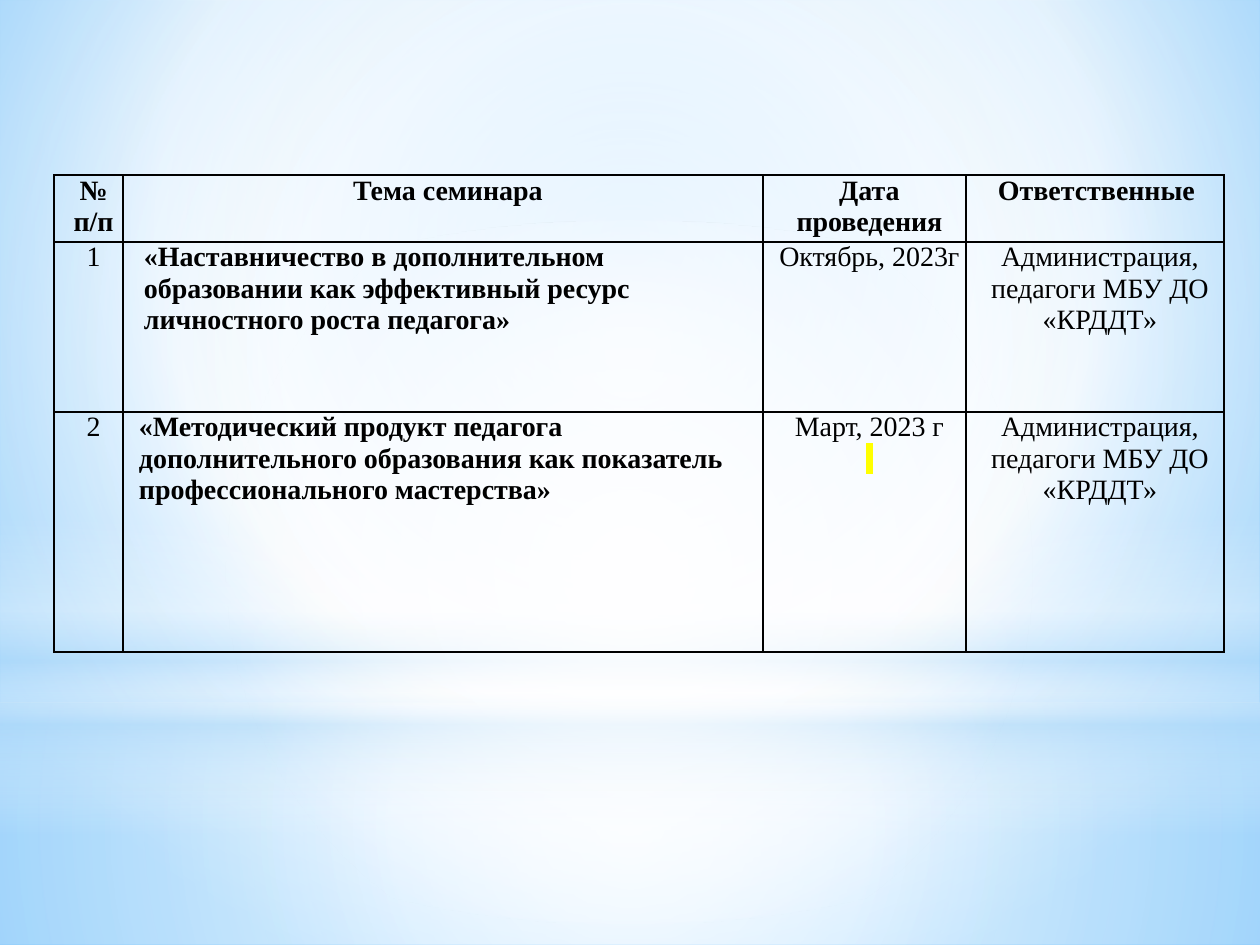
import pptx
import pptx.util
import pptx.dml.color
import pptx.enum.shapes
import pptx.enum.text
import pptx.oxml
import pptx.oxml.ns
from lxml import etree

PX = 914400 / 126
W, H = 1260, 945
FONT = "Times New Roman"
COLORS = {"ink": "000000", "white": "FFFFFF", "pale": "B4DCFA",
          "sky": "9ED5FF", "blue": "5BB9FF", "mark": "FFFF00"}
CENTER = (50, 50, 50, 50)
RECT = pptx.enum.shapes.MSO_SHAPE.RECTANGLE
OVAL = pptx.enum.shapes.MSO_SHAPE.OVAL

# shape, box, stops (position, colour, opacity), focus (None: top to bottom)
LAYERS = [
    (RECT, (0, 703, W, 242),
     [(0, "white", 91), (37, "white", 76), (100, "pale", 79)], CENTER),
    (RECT, (0, 0, W, 703),
     [(0, "white", 89), (48, "white", 62), (100, "pale", 79)], CENTER),
    (RECT, (0, 519, W, 315),
     [(0, "white", 0), (29, "white", 30), (45, "pale", 40),
      (55, "white", 26), (65, "pale", 60), (100, "white", 0)], None),
    (OVAL, (0, 221, W, 703), [(0, "white", 100), (56, "white", 0)], CENTER),
]

COLS = [69, 640, 203, 258]
ROWS = [67, 170, 240]
STAFF = "Администрация, педагоги МБУ ДО «КРДДТ»"
CELLS = [
    ["№ п/п", "Тема семинара", "Дата проведения", "Ответственные "],
    ["1", "«Наставничество в дополнительном образовании как эффективный "
     "ресурс личностного роста педагога»", "Октябрь, 2023г", STAFF],
    ["2", "«Методический продукт педагога дополнительного образования как "
     "показатель профессионального мастерства»", "Март, 2023 г", STAFF],
]


def px(n):
    return pptx.util.Emu(round(n * PX))


def sub(parent, tag, **attrs):
    return etree.SubElement(parent, pptx.oxml.ns.qn(tag),
                            {k: str(v) for k, v in attrs.items()})


def set_gradient(fill, owner, stops, focus):
    fill.gradient()
    grad = next(owner.iter(pptx.oxml.ns.qn("a:gradFill")))
    for child in list(grad):
        grad.remove(child)
    gs_list = sub(grad, "a:gsLst")
    for pos, color, opacity in stops:
        gs = sub(gs_list, "a:gs", pos=pos * 1000)
        clr = sub(gs, "a:srgbClr", val=COLORS[color])
        if opacity < 100:
            sub(clr, "a:alpha", val=opacity * 1000)
    if focus is None:
        sub(grad, "a:lin", ang=5400000, scaled=0)
    else:
        ring = sub(grad, "a:path", path="circle")
        sub(ring, "a:fillToRect", **{k: v * 1000 for k, v in zip("ltrb", focus)})


def add_backdrop(s):
    set_gradient(s.background.fill, s._element,
                 [(0, "sky", 100), (60, "white", 100), (100, "blue", 100)],
                 (20, 10, 20, 60))
    for kind, box, stops, focus in LAYERS:
        sp = s.shapes.add_shape(kind, *map(px, box))
        sp.shadow.inherit = False
        sp.line.fill.background()
        set_gradient(sp.fill, sp._element, stops, focus)


def set_borders(cell):
    tc_pr = cell._tc.get_or_add_tcPr()
    for i, side in enumerate(("a:lnL", "a:lnR", "a:lnT", "a:lnB")):
        ln = sub(tc_pr, side, w=12700)
        sub(sub(ln, "a:solidFill"), "a:srgbClr", val=COLORS["ink"])
        tc_pr.insert(i, ln)


def format_paragraph(p, bold, centered, indent):
    align = pptx.enum.text.PP_ALIGN
    p.alignment = align.CENTER if centered else align.LEFT
    p._p.get_or_add_pPr().set("marL", str(px(indent)))
    p._p.get_or_add_pPr().set("indent", "0")
    font = p.runs[0].font
    font.name, font.size, font.bold = FONT, pptx.util.Pt(16), bold
    font.color.rgb = pptx.dml.color.RGBColor.from_string(COLORS["ink"])


def highlight(r):
    mark = etree.Element(pptx.oxml.ns.qn("a:highlight"))
    sub(mark, "a:srgbClr", val=COLORS["mark"])
    r._r.rPr.find(pptx.oxml.ns.qn("a:solidFill")).addnext(mark)


def add_seminar_table(s, left, top):
    frame = s.shapes.add_table(len(ROWS), len(COLS), px(left), px(top),
                               px(sum(COLS)), px(sum(ROWS)))
    table = frame.table
    table.first_row = table.horz_banding = False
    for col, width in zip(table.columns, COLS):
        col.width = px(width)
    for row, height in zip(table.rows, ROWS):
        row.height = px(height)
    for i, texts in enumerate(CELLS):
        for j, text in enumerate(texts):
            cell = table.cell(i, j)
            cell.fill.background()
            set_borders(cell)
            cell.margin_left = cell.margin_right = px(6)
            cell.margin_top = cell.margin_bottom = 0
            cell.text_frame.text = text
            topic = i > 0 and j == 1
            format_paragraph(cell.text_frame.paragraphs[0], i == 0 or topic,
                             not topic, 15 if topic and i == 1 else 10)

    # Highlighted mark under the last date
    p = table.cell(2, 2).text_frame.add_paragraph()
    p.text = " "
    format_paragraph(p, False, True, 10)
    highlight(p.runs[0])


def main():
    prs = pptx.Presentation()
    prs.slide_width, prs.slide_height = px(W), px(H)
    s = prs.slides.add_slide(prs.slide_layouts[6])
    add_backdrop(s)
    add_seminar_table(s, 54, 175)
    prs.save("out.pptx")


if __name__ == "__main__":
    main()
